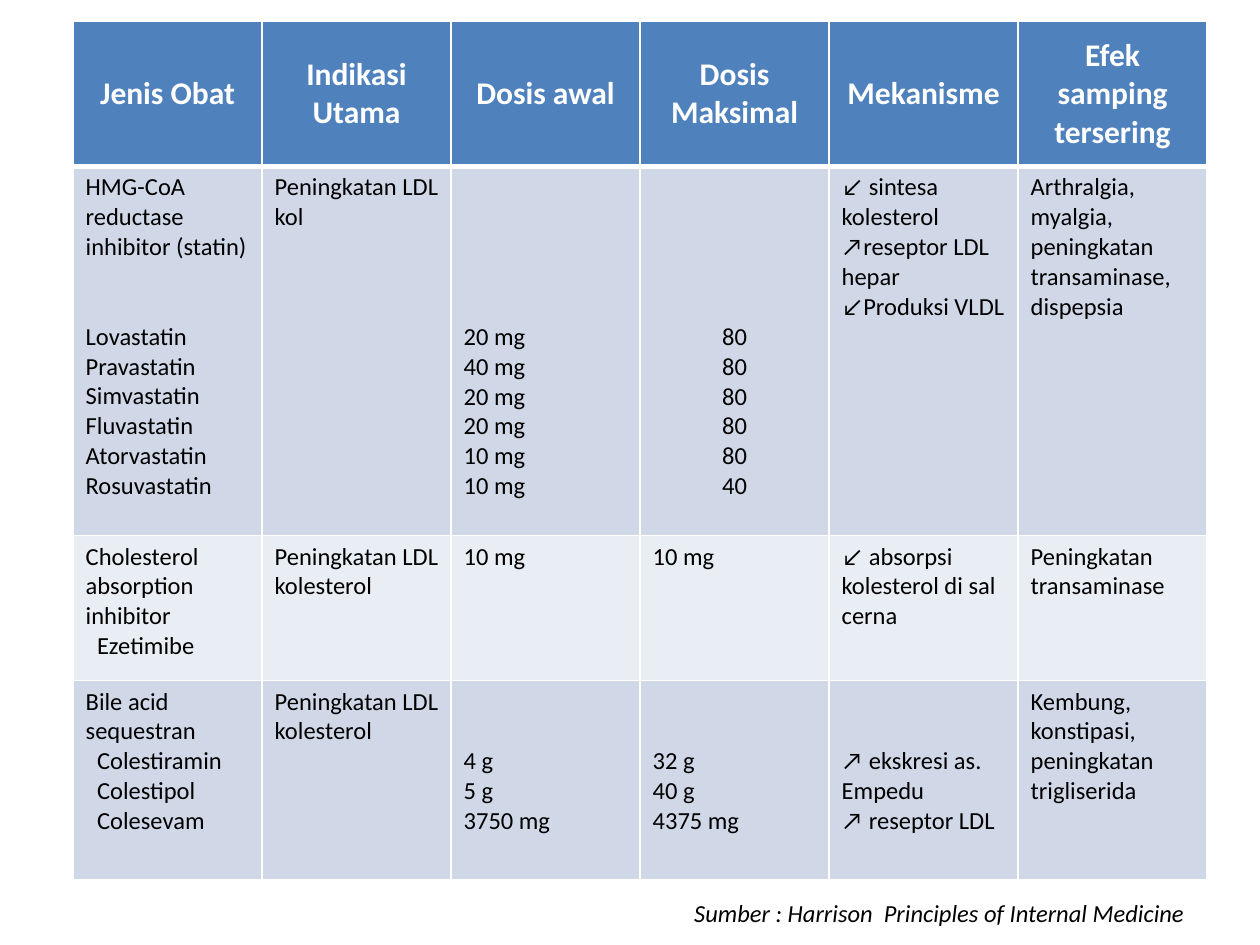
from dataclasses import dataclass

from lxml.etree import SubElement
from pptx import Presentation
from pptx.dml.color import RGBColor
from pptx.enum.text import MSO_ANCHOR, PP_ALIGN
from pptx.oxml.ns import qn
from pptx.util import Inches, Pt

COLORS = {
    "header": "4F81BD",
    "band": "D0D8E8",
    "light": "E9EDF4",
    "white": "FFFFFF",
    "black": "000000",
}
FONT = "Calibri"
BODY_SIZE = 14
LINE_HEIGHT = 17.1
COLUMN_WIDTH = 1.5
ROW_HEIGHTS = [1.15, 2.93, 1.15, 1.58]
ROW_FILLS = ["band", "light", "band"]


@dataclass
class Entry:
    lines: list
    lines_above: int = 0
    lines_after_first: int = 0
    indent: float = 0
    align: PP_ALIGN = PP_ALIGN.LEFT


HEADERS = ["Jenis Obat", "Indikasi Utama", "Dosis awal", "Dosis Maksimal",
           "Mekanisme", "Efek samping tersering"]

DRUG_ROWS = [
    [
        Entry(["HMG-CoA reductase inhibitor (statin)", "Lovastatin", "Pravastatin",
               "Simvastatin", "Fluvastatin", "Atorvastatin", "Rosuvastatin"],
              lines_after_first=2),
        Entry(["Peningkatan LDL kol"]),
        Entry(["20 mg", "40 mg", "20 mg", "20 mg", "10 mg", "10 mg"], lines_above=5),
        Entry(["80", "80", "80", "80", "80", "40"], lines_above=5,
              align=PP_ALIGN.CENTER),
        Entry(["↙ sintesa kolesterol", "↗reseptor LDL hepar", "↙Produksi VLDL"]),
        Entry(["Arthralgia, myalgia, peningkatan transaminase, dispepsia"]),
    ],
    [
        Entry(["Cholesterol absorption inhibitor", "Ezetimibe"], indent=0.09),
        Entry(["Peningkatan LDL kolesterol"]),
        Entry(["10 mg"]),
        Entry(["10 mg"]),
        Entry(["↙ absorpsi kolesterol di sal cerna"]),
        Entry(["Peningkatan transaminase"]),
    ],
    [
        Entry(["Bile acid sequestran", "Colestiramin", "Colestipol", "Colesevam"],
              indent=0.09),
        Entry(["Peningkatan LDL kolesterol"]),
        Entry(["4 g", "5 g", "3750 mg"], lines_above=2),
        Entry(["32 g", "40 g", "4375 mg"], lines_above=2),
        Entry(["↗ ekskresi as. Empedu", "↗ reseptor LDL"], lines_above=2),
        Entry(["Kembung, konstipasi, peningkatan trigliserida"]),
    ],
]


def style_runs(para, size, color, bold=False, italic=False):
    for span in para.runs:
        span.font.name = FONT
        span.font.size = Pt(size)
        span.font.bold = bold
        span.font.italic = italic
        span.font.color.rgb = RGBColor.from_string(COLORS[color])


def add_borders(cell, top, bottom):
    properties = cell._tc.get_or_add_tcPr()
    for side, width in (("L", 1), ("R", 1), ("T", top), ("B", bottom)):
        line = SubElement(properties, qn(f"a:ln{side}"), w=str(Pt(width)))
        fill = SubElement(line, qn("a:solidFill"))
        SubElement(fill, qn("a:srgbClr"), val=COLORS["white"])


def fill_cell(cell, color):
    cell.fill.solid()
    cell.fill.fore_color.rgb = RGBColor.from_string(COLORS[color])


def write_header(cell, label):
    add_borders(cell, 1, 3)
    fill_cell(cell, "header")
    cell.vertical_anchor = MSO_ANCHOR.MIDDLE
    cell.text_frame.text = label
    para = cell.text_frame.paragraphs[0]
    para.alignment = PP_ALIGN.CENTER
    style_runs(para, 18, "white", bold=True)


def write_entry(cell, entry, color, top):
    add_borders(cell, top, 1)
    fill_cell(cell, color)
    cell.margin_top = Inches(0.05) + Pt(entry.lines_above * LINE_HEIGHT)
    cell.text_frame.text = "\n".join(entry.lines)
    for index, para in enumerate(cell.text_frame.paragraphs):
        para.alignment = entry.align
        if index == 1 and entry.lines_after_first:
            para.space_before = Pt(entry.lines_after_first * LINE_HEIGHT)
        if index and entry.indent:
            para._p.get_or_add_pPr().set("marL", str(Inches(entry.indent)))
        style_runs(para, BODY_SIZE, color="black")


def add_drug_table(page):
    frame = page.shapes.add_table(
        len(ROW_HEIGHTS), len(HEADERS), Inches(0.58), Inches(0.17),
        Inches(COLUMN_WIDTH * len(HEADERS)), Inches(sum(ROW_HEIGHTS)))
    table = frame.table
    for column in table.columns:
        column.width = Inches(COLUMN_WIDTH)
    for row, height in zip(table.rows, ROW_HEIGHTS):
        row.height = Inches(height)
    for column, label in enumerate(HEADERS):
        write_header(table.cell(0, column), label)
    for row, (entries, color) in enumerate(zip(DRUG_ROWS, ROW_FILLS), start=1):
        for column, entry in enumerate(entries):
            write_entry(table.cell(row, column), entry, color, 3 if row == 1 else 1)


def add_source(page, text):
    box = page.shapes.add_textbox(Inches(4.83), Inches(7.08), Inches(4.67), Inches(0.34))
    box.text_frame.word_wrap = True
    box.text_frame.text = text
    para = box.text_frame.paragraphs[0]
    para.alignment = PP_ALIGN.RIGHT
    style_runs(para, BODY_SIZE, "black", italic=True)


def main():
    deck = Presentation()
    deck.slide_width = Inches(10)
    deck.slide_height = Inches(7.5)
    page = deck.slides.add_slide(deck.slide_layouts[6])
    add_drug_table(page)
    add_source(page, "Sumber : Harrison  Principles of Internal Medicine")
    deck.save("out.pptx")


if __name__ == "__main__":
    main()
